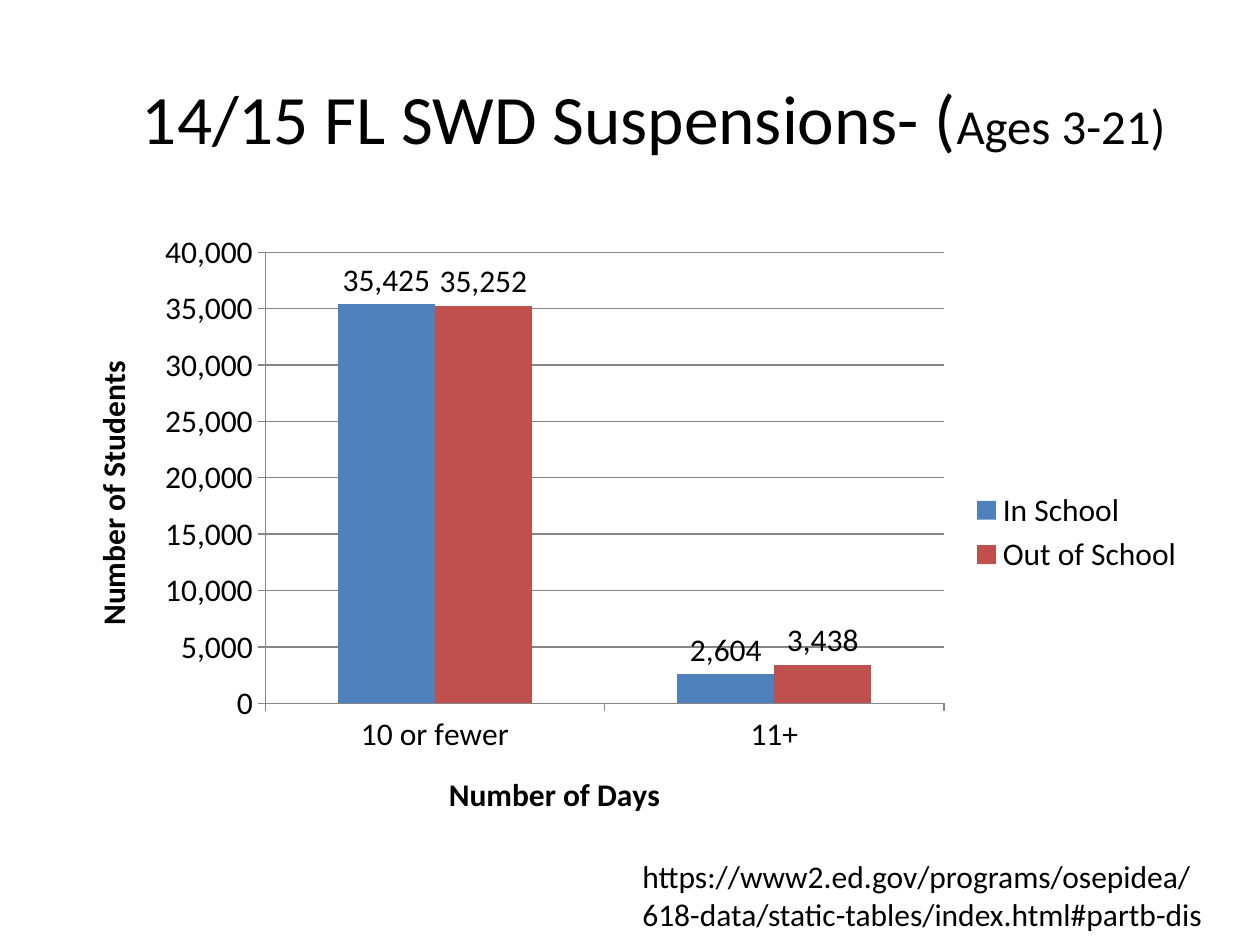
from pptx import Presentation
from pptx import util as u
from pptx.chart.data import CategoryChartData
from pptx.dml.color import RGBColor
from pptx.enum import chart as ch, text

FONT = "Calibri"


def rgb(value):
    return RGBColor.from_string(value)


def style(font, size, **extra):
    for name, value in {"name": FONT, "size": u.Pt(size), **extra}.items():
        setattr(font, name, value)
    font.color.rgb = rgb("000000")


prs = Presentation()
prs.slide_width, prs.slide_height = u.Cm(25.4), u.Cm(19.05)
s = prs.slides.add_slide(prs.slide_layouts[5])

# Title
sp = s.shapes.title
for name, value in {"left": 1.27, "top": 0.76, "width": 23.5, "height": 3.18}.items():
    setattr(sp, name, u.Cm(value))
tf = sp.text_frame
tf.vertical_anchor = text.MSO_ANCHOR.MIDDLE
p = tf.paragraphs[0]
p.alignment = text.PP_ALIGN.CENTER
for words, size in ((" 14/15 FL SWD Suspensions- (", 39.6), ("Ages 3-21)", 27.9)):
    r = p.add_run()
    r.text = words
    style(r.font, size)

# Suspensions chart
data = CategoryChartData(number_format="#,##0")
data.categories = ["10 or fewer", "11+"]
data.add_series("In School", (35425, 2604))
data.add_series("Out of School", (35252, 3438))
chart = s.shapes.add_chart(ch.XL_CHART_TYPE.COLUMN_CLUSTERED, u.Cm(1.27), u.Cm(4.45),
                           u.Cm(22.86), u.Cm(12.57), data).chart
style(chart.font, 18)
chart.has_title = False
chart.has_legend = True
chart.legend.position = ch.XL_LEGEND_POSITION.RIGHT
chart.legend.include_in_layout = False

# Bars and value labels
plot = chart.plots[0]
plot.gap_width, plot.overlap, plot.vary_by_categories = 150, 0, False
for series, color in zip(plot.series, ("4F81BD", "C0504D")):
    series.format.fill.solid()
    series.format.fill.fore_color.rgb = rgb(color)
    labels = series.data_labels
    for name, value in {"show_value": True, "number_format": "#,##0",
                        "number_format_is_linked": False,
                        "position": ch.XL_LABEL_POSITION.OUTSIDE_END}.items():
        setattr(labels, name, value)
    style(labels.font, 18)

# Axes
for axis, title in ((chart.category_axis, "Number of Days"),
                    (chart.value_axis, "Number of Students")):
    tf = axis.axis_title.text_frame
    tf.text = title
    style(tf.paragraphs[0].runs[0].font, 18, bold=True)
    axis.major_tick_mark = ch.XL_TICK_MARK.OUTSIDE
    axis.minor_tick_mark = ch.XL_TICK_MARK.NONE
    axis.format.line.color.rgb = rgb("868686")
    style(axis.tick_labels.font, 18)
axis = chart.value_axis
axis.minimum_scale, axis.maximum_scale, axis.major_unit = 0, 40000, 5000
axis.major_gridlines.format.line.color.rgb = rgb("868686")
axis.tick_labels.number_format = "#,##0"
axis.tick_labels.number_format_is_linked = False

# Source address
sp = s.shapes.add_textbox(u.Cm(12.7), u.Cm(17.15), u.Cm(12.7), u.Cm(1.8))
tf = sp.text_frame
tf.word_wrap = True
tf.auto_size = text.MSO_AUTO_SIZE.SHAPE_TO_FIT_TEXT
r = tf.paragraphs[0].add_run()
r.text = "https://www2.ed.gov/programs/osepidea/618-data/static-tables/index.html#partb-dis"
style(r.font, 18)

prs.save("out.pptx")
